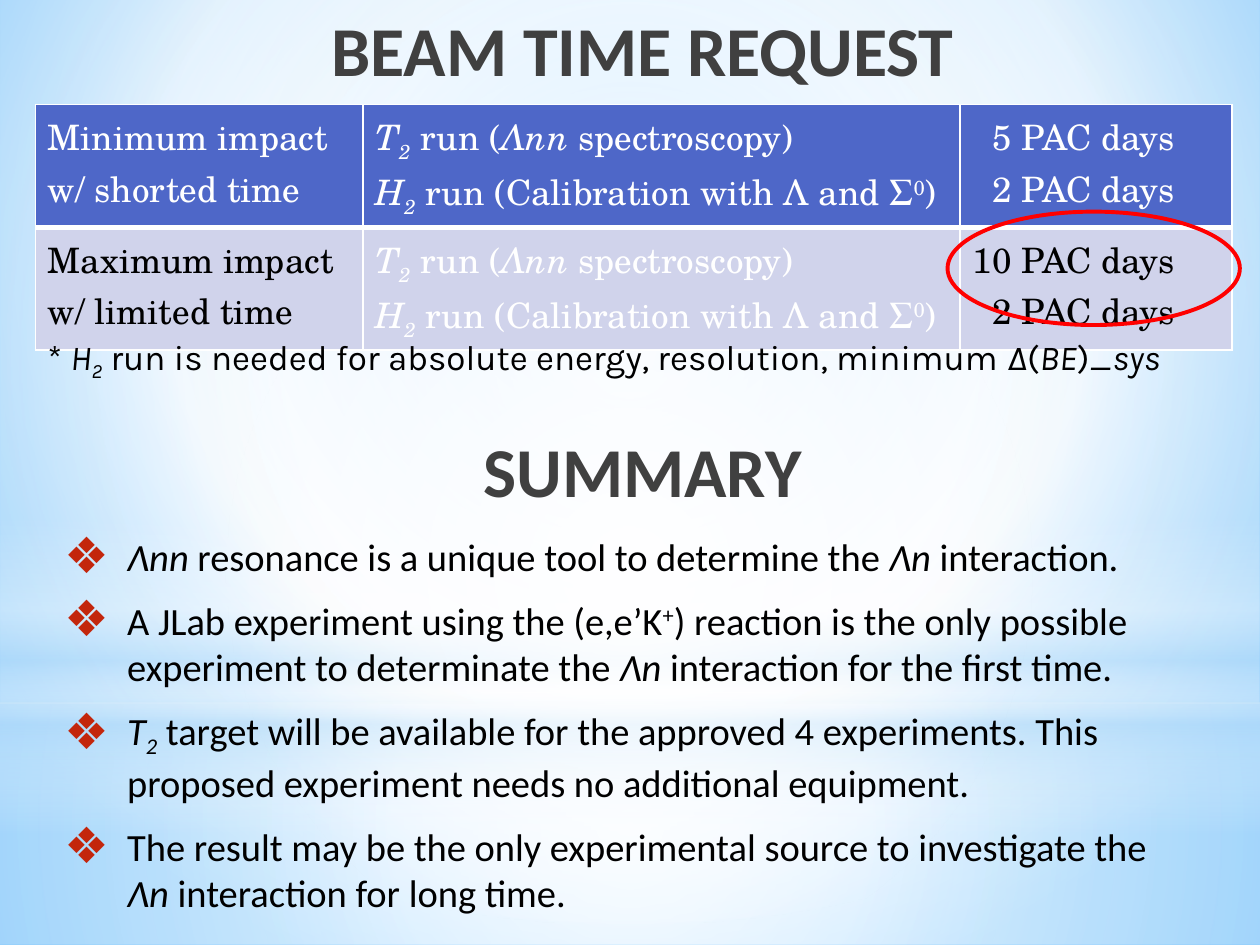
from dataclasses import dataclass
from typing import Any, NamedTuple

from lxml.etree import SubElement
from pptx import Presentation
from pptx.dml.color import RGBColor
from pptx.enum.shapes import MSO_SHAPE
from pptx.enum.text import MSO_ANCHOR, MSO_AUTO_SIZE, PP_ALIGN
from pptx.oxml import parse_xml
from pptx.oxml.ns import nsdecls, qn
from pptx.util import Inches, Pt

COLORS = {
    "white": "FFFFFF", "black": "000000", "heading": "404040", "bullet": "C3260C",
    "strong": "4E67C8", "pale": "D0D3EB", "ring": "FF0000",
    "mist": "B4DCFA", "sky": "9ED5FF", "deep": "5BB9FF",
}
GRID_COLUMNS, GRID_ROWS = 100, 75
MARKS = {"~": "italic", "|": "sub", "^": "super"}
BASELINES = {"sub": "-25000", "super": "30000"}
TEXT_FRAME = {"word_wrap": True, "auto_size": MSO_AUTO_SIZE.NONE, "vertical_anchor": MSO_ANCHOR.TOP}


class Box(NamedTuple):
    column: float
    row: float
    columns: float
    rows: float


class Stop(NamedTuple):
    position: int
    color: str
    alpha: int = 100


@dataclass
class Gradient:
    stops: list[Stop]
    focus: tuple[int, int, int, int] | None = (50, 50, 50, 50)


@dataclass
class Glow:
    box: Box
    gradient: Gradient
    kind: Any = MSO_SHAPE.RECTANGLE


@dataclass
class Style:
    font: str
    size: int
    color: str
    bold: bool = False


@dataclass
class Row:
    label: list[str]
    days: list[str]
    height: float
    fill: str
    color: str
    bottom: int


HEADING = Style("Calibri", 40, "heading", True)
BODY = Style("Calibri", 22, "black")
NOTE = Style("Karla", 20, "black")

BACKGROUND = Gradient([Stop(0, "sky"), Stop(60, "white"), Stop(100, "deep")], (20, 10, 20, 60))
GLOWS = [
    Glow(Box(0, 55.8, 100, 19.2), Gradient([Stop(0, "white", 91), Stop(37, "white", 76), Stop(100, "mist", 79)])),
    Glow(Box(0, 0, 100, 55.8), Gradient([Stop(0, "white", 89), Stop(48, "white", 62), Stop(100, "mist", 79)])),
    Glow(Box(0, 41.2, 100, 25), Gradient([
        Stop(0, "white", 0), Stop(29, "white", 30), Stop(45, "mist", 40),
        Stop(55, "white", 26), Stop(65, "mist", 60), Stop(100, "white", 0)], None)),
    Glow(Box(0, 17.5, 100, 55.8), Gradient([Stop(0, "white"), Stop(56, "white", 0)]), MSO_SHAPE.OVAL),
]
RUNS = ["~T|2|~ run (~Λnn~ spectroscopy)", "~H|2|~ run (Calibration with Λ and Σ^0^)"]
ROWS = [
    Row(["Minimum impact", "w/ shorted time"], ["5 PAC days", "2 PAC days"], 8.9, "strong", "white", 3),
    Row(["Maximum impact", "w/ limited time"], ["10 PAC days", "2 PAC days"], 8.4, "pale", "black", 1),
]
COLUMN_WIDTHS = [26, 47.4, 21.6]
SUMMARY = [
    "~Λnn~ resonance is a unique tool to determine the ~Λn~ interaction.",
    "A JLab experiment using the (e,e’K^+^) reaction is the only possible experiment "
    "to determinate the ~Λn ~interaction for the first time.",
    "~T|2|~ target will be available for the approved 4 experiments. "
    "This proposed experiment needs no additional equipment.",
    "The result may be the only experimental source to investigate the ~Λn~ interaction for long time.",
]
FOOTNOTE = "* ~H|2|~ run is needed for absolute energy, resolution, minimum ~Δ~(~BE~)~_sys~"

presentation = Presentation()
presentation.slide_width, presentation.slide_height = Inches(10), Inches(7.5)
slide = presentation.slides.add_slide(presentation.slide_layouts[1])


def apply(target: Any, values: dict[str, Any]) -> None:
    for name, value in values.items():
        setattr(target, name, value)


def across(columns: float) -> int:
    return round(presentation.slide_width * columns / GRID_COLUMNS)


def down(rows: float) -> int:
    return round(presentation.slide_height * rows / GRID_ROWS)


def edges(box: Box) -> tuple[int, int, int, int]:
    return across(box.column), down(box.row), across(box.columns), down(box.rows)


def color(name: str) -> RGBColor:
    return RGBColor.from_string(COLORS[name])


def paint_gradient(properties: Any, gradient: Gradient) -> None:
    stops = "".join(
        f'<a:gs pos="{stop.position * 1000}"><a:srgbClr val="{COLORS[stop.color]}">'
        f'<a:alpha val="{stop.alpha * 1000}"/></a:srgbClr></a:gs>' for stop in gradient.stops)
    direction = '<a:lin ang="5400000" scaled="0"/>'
    if gradient.focus:
        sides = " ".join(f'{side}="{share * 1000}"' for side, share in zip("ltrb", gradient.focus))
        direction = f'<a:path path="circle"><a:fillToRect {sides}/></a:path>'
    fill = parse_xml(f'<a:gradFill {nsdecls("a")} rotWithShape="1"><a:gsLst>{stops}</a:gsLst>{direction}</a:gradFill>')
    properties.replace(properties.find(qn("a:solidFill")), fill)


def write(frame: Any, lines: list[str], style: Style, **layout: Any) -> None:
    for index, line in enumerate(lines):
        paragraph = frame.paragraphs[0] if index == 0 else frame.add_paragraph()
        apply(paragraph, layout)
        active: set[str] = set()
        text = ""
        for character in line + "\n":
            if character not in MARKS and character != "\n":
                text += character
                continue
            if text:
                run = paragraph.add_run()
                run.text = text
                apply(run.font, {"name": style.font, "size": Pt(style.size),
                                 "bold": style.bold, "italic": "italic" in active})
                run.font.color.rgb = color(style.color)
                for mark in active & BASELINES.keys():
                    run.font._element.set("baseline", BASELINES[mark])
                text = ""
            active ^= {MARKS.get(character, "")}


def place(shape: Any, box: Box) -> None:
    apply(shape, dict(zip(("left", "top", "width", "height"), edges(box))))
    apply(shape.text_frame, TEXT_FRAME)
    slide.shapes.element.append(shape.element)


def draw_heading(shape: Any, text: str, row: float) -> None:
    place(shape, Box(0, row, 100, 6.8))
    write(shape.text_frame, [text], HEADING, alignment=PP_ALIGN.CENTER)
    shape.text_frame.paragraphs[0]._p.get_or_add_pPr().set("marL", str(across(2)))


def draw_glow(glow: Glow) -> None:
    shape = slide.shapes.add_shape(glow.kind, *edges(glow.box))
    shape.shadow.inherit = False
    shape.line.fill.background()
    shape.fill.solid()
    paint_gradient(shape.element.spPr, glow.gradient)


def draw_borders(cell: Any, bottom: int) -> None:
    properties = cell._tc.get_or_add_tcPr()
    for index, (side, width) in enumerate(zip("LRTB", (1, 1, 1, bottom))):
        line = parse_xml(f'<a:ln{side} {nsdecls("a")} w="{Pt(width)}"><a:solidFill>'
                         f'<a:srgbClr val="{COLORS["white"]}"/></a:solidFill></a:ln{side}>')
        properties.insert(index, line)


def draw_table(box: Box) -> None:
    table = slide.shapes.add_table(len(ROWS), len(COLUMN_WIDTHS), *edges(box)).table
    apply(table, {"first_row": False, "horz_banding": False})
    for column, width in zip(table.columns, COLUMN_WIDTHS):
        column.width = across(width)
    for index, row in enumerate(ROWS):
        table.rows[index].height = down(row.height)
        contents = [(row.label, row.color), (RUNS, "white"), (row.days, row.color)]
        for cell, (lines, text_color) in zip(table.rows[index].cells, contents):
            cell.fill.solid()
            cell.fill.fore_color.rgb = color(row.fill)
            draw_borders(cell, row.bottom)
            write(cell.text_frame, lines, Style("TeX Gyre Schola", 20, text_color))
        apply(cell, {"margin_left": 0, "margin_right": across(4.6)})
        for paragraph in cell.text_frame.paragraphs:
            paragraph.alignment = PP_ALIGN.RIGHT


def draw_ring(box: Box) -> None:
    ring = slide.shapes.add_shape(MSO_SHAPE.OVAL, *edges(box))
    ring.shadow.inherit = False
    ring.fill.background()
    ring.line.color.rgb = color("ring")
    ring.line.width = Pt(2.25)


def draw_summary(shape: Any, box: Box) -> None:
    place(shape, box)
    write(shape.text_frame, SUMMARY, BODY, space_before=Pt(0), space_after=Pt(10))
    for paragraph in shape.text_frame.paragraphs:
        properties = paragraph._p.get_or_add_pPr()
        properties.attrib.update({"marL": str(across(5)), "indent": str(-across(5))})
        SubElement(SubElement(properties, qn("a:buClr")), qn("a:srgbClr")).set("val", COLORS["bullet"])
        SubElement(properties, qn("a:buSzPct")).set("val", "130000")
        SubElement(properties, qn("a:buChar")).set("char", "❖")


def main() -> None:
    slide.background.fill.solid()
    paint_gradient(slide.element.cSld.bg.bgPr, BACKGROUND)
    for glow in GLOWS:
        draw_glow(glow)
    title, body = slide.placeholders
    draw_heading(title, "BEAM TIME REQUEST", 0)
    draw_table(Box(2.8, 8.3, 95, 17.3))
    draw_ring(Box(75.2, 16.8, 23.2, 9))
    draw_heading(slide.shapes.add_textbox(0, 0, 0, 0), "SUMMARY", 33.4)
    draw_summary(body, Box(4.1, 41.8, 91.9, 32.1))
    footnote = slide.shapes.add_textbox(0, 0, 0, 0)
    place(footnote, Box(2.8, 26.1, 95.9, 4.4))
    write(footnote.text_frame, [FOOTNOTE], NOTE)
    presentation.save("out.pptx")


if __name__ == "__main__":
    main()
